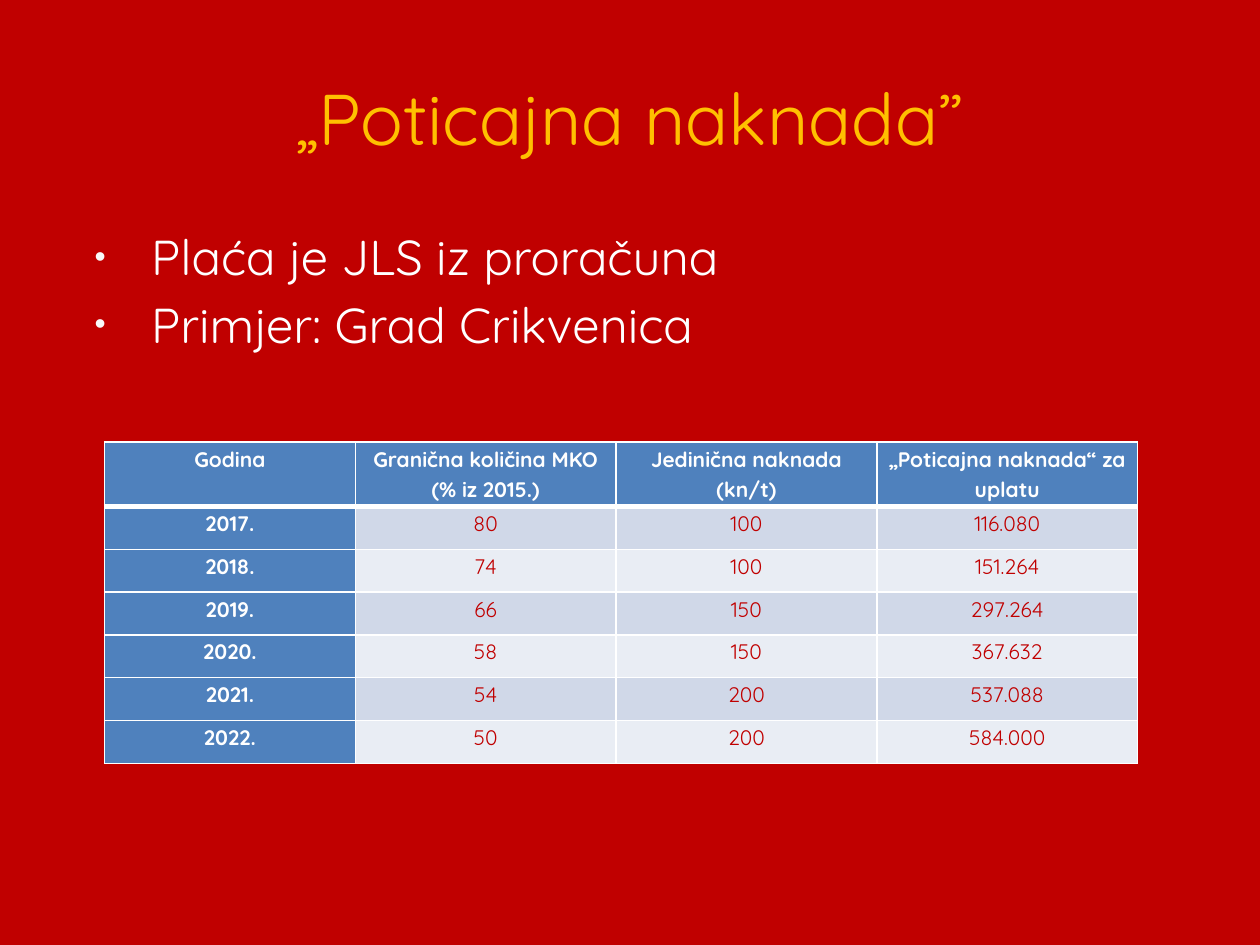
from lxml import etree
from pptx import Presentation, util as u
from pptx.dml.color import RGBColor
from pptx.enum import text
from pptx.oxml.ns import qn

RED = RGBColor(0xC0, 0x00, 0x00)
GOLD = RGBColor(0xFF, 0xC0, 0x00)
WHITE = RGBColor(0xFF, 0xFF, 0xFF)
BULLET = RGBColor(0xF9, 0xF9, 0xF9)
BLUE = RGBColor(0x4F, 0x81, 0xBD)
BANDS = (RGBColor(0xD0, 0xD8, 0xE8), RGBColor(0xE9, 0xED, 0xF4))

HEADERS = ("Godina", "Granična količina MKO (% iz 2015.)",
           "Jedinična naknada (kn/t)", "„Poticajna naknada“ za uplatu")
FEES = (
    ("2017.", "80", "100", "116.080"),
    ("2018.", "74", "100", "151.264"),
    ("2019.", "66", "150", "297.264"),
    ("2020.", "58", "150", "367.632"),
    ("2021.", "54", "200", "537.088"),
    ("2022.", "50", "200", "584.000"),
)


class FeeSlide:
    font_name = "Quicksand"

    def __init__(self, presentation):
        self.width = presentation.slide_width
        self.height = presentation.slide_height
        self.slide = presentation.slides.add_slide(presentation.slide_layouts[1])
        background = self.slide.background.fill
        background.solid()
        background.fore_color.rgb = RED

    def place(self, left, top, width, height):
        """Turn shares of the slide's size into lengths."""
        return (round(left * self.width), round(top * self.height),
                round(width * self.width), round(height * self.height))

    def move(self, shape, *shares):
        shape.left, shape.top, shape.width, shape.height = self.place(*shares)

    def add_text(self, paragraph, words, size, color, bold=False):
        run = paragraph.add_run()
        run.text = words
        run.font.name = self.font_name
        run.font.size = u.Pt(size)
        run.font.color.rgb = color
        run.font.bold = bold

    def title(self, words, *shares):
        shape = self.slide.shapes.title
        self.move(shape, *shares)
        shape.text_frame.vertical_anchor = text.MSO_ANCHOR.MIDDLE
        paragraph = shape.text_frame.paragraphs[0]
        paragraph.alignment = text.PP_ALIGN.CENTER
        self.add_text(paragraph, words, 41, GOLD)

    def bullet(self, paragraph):
        properties = paragraph._p.get_or_add_pPr()
        properties.set("marL", str(u.Inches(0.6)))
        properties.set("indent", str(u.Inches(-0.45)))
        color = etree.SubElement(properties, qn("a:buClr"))
        etree.SubElement(color, qn("a:srgbClr"), val=str(BULLET))
        etree.SubElement(properties, qn("a:buSzPct"), val="65000")
        etree.SubElement(properties, qn("a:buFont"), typeface="Arial")
        etree.SubElement(properties, qn("a:buChar"), char="•")

    def bullets(self, items, *shares):
        shape = self.slide.placeholders[1]
        self.move(shape, *shares)
        frame = shape.text_frame
        for index, item in enumerate(items):
            paragraph = frame.add_paragraph() if index else frame.paragraphs[0]
            self.bullet(paragraph)
            paragraph.space_before = u.Pt(5 if index else 0)
            self.add_text(paragraph, item, 28, WHITE)

    def borders(self, cell, top, bottom):
        """Draw white cell borders, placed ahead of the cell's fill."""
        properties = cell._tc.get_or_add_tcPr()
        widths = {"a:lnL": 1, "a:lnR": 1, "a:lnT": top, "a:lnB": bottom}
        for position, (tag, points) in enumerate(widths.items()):
            line = etree.Element(qn(tag), w=str(u.Pt(points)))
            fill = etree.SubElement(line, qn("a:solidFill"))
            etree.SubElement(fill, qn("a:srgbClr"), val=str(WHITE))
            properties.insert(position, line)

    def cell(self, cell, words, row, column):
        is_header = row == 0 or column == 0
        cell.fill.solid()
        cell.fill.fore_color.rgb = BLUE if is_header else BANDS[(row - 1) % 2]
        cell.margin_left = cell.margin_right = u.Inches(0.07)
        cell.margin_top = cell.margin_bottom = 0
        self.borders(cell, 3 if row == 1 else 1, 3 if row == 0 else 1)
        paragraph = cell.text_frame.paragraphs[0]
        paragraph.alignment = text.PP_ALIGN.CENTER
        paragraph.line_spacing = 1.15
        self.add_text(paragraph, words, 12, WHITE if is_header else RED, is_header)

    def table(self, rows, column_widths, row_heights, *shares):
        frame = self.slide.shapes.add_table(
            len(rows), len(column_widths), *self.place(*shares))
        table = frame.table
        table.first_col = True
        table.horz_banding = False
        for column, width in zip(table.columns, column_widths):
            column.width = u.Inches(width)
        for row, height in zip(table.rows, row_heights):
            row.height = u.Inches(height)
        for row, values in enumerate(rows):
            for column, words in enumerate(values):
                self.cell(table.cell(row, column), words, row, column)


def main():
    presentation = Presentation()
    presentation.slide_width = u.Inches(10)
    presentation.slide_height = u.Inches(7.5)
    slide = FeeSlide(presentation)
    slide.title("„Poticajna naknada”", 0.05, 0.04, 0.9, 1.25 / 7.5)
    slide.bullets(("Plaća je JLS iz proračuna", "Primjer: Grad Crikvenica"),
                  0.05, 1.75 / 7.5, 0.9, 5.15 / 7.5)
    slide.table((HEADERS, *FEES), [1.99] + [2.07] * 3,
                [0.51] + [0.34] * len(FEES),
                0.083, 3.51 / 7.5, 0.82, 2.53 / 7.5)
    presentation.save("out.pptx")


if __name__ == "__main__":
    main()
